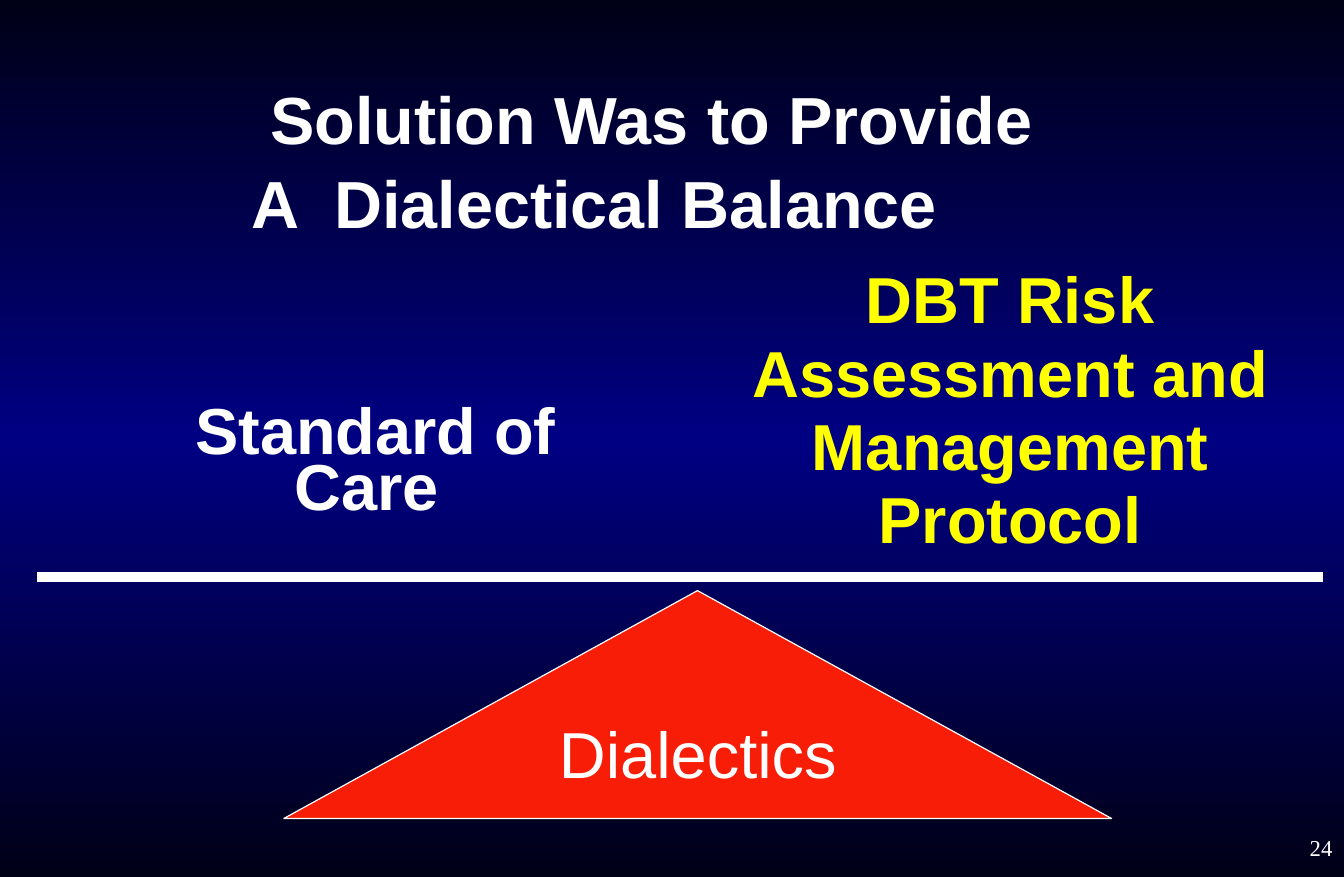
from dataclasses import dataclass

import copy
import lxml.etree
import pptx
import pptx.dml.color
import pptx.enum.shapes
import pptx.enum.text
import pptx.oxml.ns
import pptx.slide
import pptx.util
from pptx.util import Cm

ALIGN = pptx.enum.text.PP_ALIGN
ANCHOR = pptx.enum.text.MSO_ANCHOR
qualified = pptx.oxml.ns.qn


@dataclass(frozen=True)
class Theme:
    night: str = "000017"
    blue: str = "000082"
    white: str = "FFFFFF"
    yellow: str = "FFFF00"
    red: str = "F71D06"
    sans: str = "Arial"
    serif: str = "Times New Roman"
    title_size: int = 41
    body_size: int = 40
    number_size: int = 14


THEME = Theme()


@dataclass(frozen=True)
class Line:
    text: str
    indent: float = 0


@dataclass(frozen=True)
class Block:
    lines: tuple[Line, ...]
    box: tuple[float, float, float, float]
    size: int = THEME.body_size
    font: str = THEME.sans
    color: str = THEME.white
    bold: bool = True
    align: ALIGN = ALIGN.LEFT
    anchor: ANCHOR = ANCHOR.TOP
    spacing: float = 1.0
    shadow: bool = False
    wrap: bool = True


BLOCKS = (
    # Title, each line with its own indent
    Block((Line("Solution Was to Provide", 5.62), Line("A  Dialectical Balance", 5.22)),
          (0, 1.7, 29.21, 3.45), size=THEME.title_size, anchor=ANCHOR.MIDDLE,
          spacing=1.05, shadow=True),
    # Right side of the balance
    Block((Line("DBT Risk Assessment and Management Protocol"),),
          (15.16, 5.64, 13.59, 6.43), color=THEME.yellow, align=ALIGN.CENTER,
          spacing=0.94, shadow=True),
    # Left side of the balance
    Block((Line("Standard of Care "),), (3.73, 8.75, 8.86, 2.67),
          align=ALIGN.CENTER, spacing=0.73),
    # Fulcrum label
    Block((Line("Dialectics", 0.65),), (11.25, 15.38, 9.42, 1.98), bold=False),
    # Slide number
    Block((Line("24"),), (23.11, 17.78, 6.1, 1.27), size=THEME.number_size,
          font=THEME.serif, bold=False, align=ALIGN.RIGHT, anchor=ANCHOR.MIDDLE, wrap=False),
)


def rgb(color: str) -> pptx.dml.color.RGBColor:
    return pptx.dml.color.RGBColor.from_string(color)


def paint_background(slide: pptx.slide.Slide) -> None:
    fill = slide.background.fill
    fill.gradient()
    fill.gradient_angle = 270
    stop_list = slide.element.find(".//" + qualified("a:gsLst"))
    stop_list.append(copy.deepcopy(stop_list[-1]))
    colors = (THEME.night, THEME.blue, THEME.night)
    for index, (stop, color) in enumerate(zip(fill.gradient_stops, colors)):
        stop.color.rgb = rgb(color)
        stop.position = index / 2


def add_text_shadow(run) -> None:
    effects = lxml.etree.Element(qualified("a:effectLst"))
    shadow = lxml.etree.SubElement(effects, qualified("a:outerShdw"),
                                   dist="38100", dir="2700000")
    lxml.etree.SubElement(shadow, qualified("a:srgbClr"), val="000000")
    run.font.fill.solid()
    run.font.color.rgb = run.font.color.rgb or rgb(THEME.white)
    run._r.rPr.find(qualified("a:solidFill")).addnext(effects)


def add_line(paragraph, text: str, *, size: int, font: str, color: str, bold: bool,
             align: ALIGN, spacing: float, indent: float, shadow: bool) -> None:
    paragraph.alignment = align
    paragraph.line_spacing = spacing
    if indent:
        paragraph._p.get_or_add_pPr().set("marL", str(Cm(indent)))
    run = paragraph.add_run()
    run.text = text
    run.font.size = pptx.util.Pt(size)
    run.font.name = font
    run.font.bold = bold
    run.font.color.rgb = rgb(color)
    if shadow:
        add_text_shadow(run)


def add_block(slide: pptx.slide.Slide, block: Block) -> None:
    frame = slide.shapes.add_textbox(*map(Cm, block.box)).text_frame
    frame.word_wrap = block.wrap
    frame.vertical_anchor = block.anchor
    for index, line in enumerate(block.lines):
        paragraph = frame.add_paragraph() if index else frame.paragraphs[0]
        add_line(paragraph, line.text, size=block.size, font=block.font, color=block.color,
                 bold=block.bold, align=block.align, spacing=block.spacing,
                 indent=line.indent, shadow=block.shadow)


def add_fulcrum(slide: pptx.slide.Slide) -> None:
    builder = slide.shapes.build_freeform(Cm(15.16), Cm(12.83))
    builder.add_line_segments([(Cm(24.16), Cm(17.78)), (Cm(6.17), Cm(17.78))], close=True)
    fulcrum = builder.convert_to_shape()
    fulcrum.shadow.inherit = False
    fulcrum.fill.solid()
    fulcrum.fill.fore_color.rgb = rgb(THEME.red)
    fulcrum.line.color.rgb = rgb(THEME.white)
    fulcrum.line.width = pptx.util.Pt(0.75)


def add_beam(slide: pptx.slide.Slide) -> None:
    beam = slide.shapes.add_connector(pptx.enum.shapes.MSO_CONNECTOR.STRAIGHT,
                                      Cm(0.81), Cm(12.54), Cm(28.75), Cm(12.54))
    beam.line.color.rgb = rgb(THEME.white)
    beam.line.width = pptx.util.Pt(6)
    lxml.etree.SubElement(beam._element.spPr, qualified("a:effectLst"))


def main() -> None:
    presentation = pptx.Presentation()
    presentation.slide_width, presentation.slide_height = Cm(29.21), Cm(19.05)
    slide = presentation.slides.add_slide(presentation.slide_layouts[6])
    paint_background(slide)
    add_fulcrum(slide)
    add_beam(slide)
    for block in BLOCKS:
        add_block(slide, block)
    presentation.save("out.pptx")


if __name__ == "__main__":
    main()
